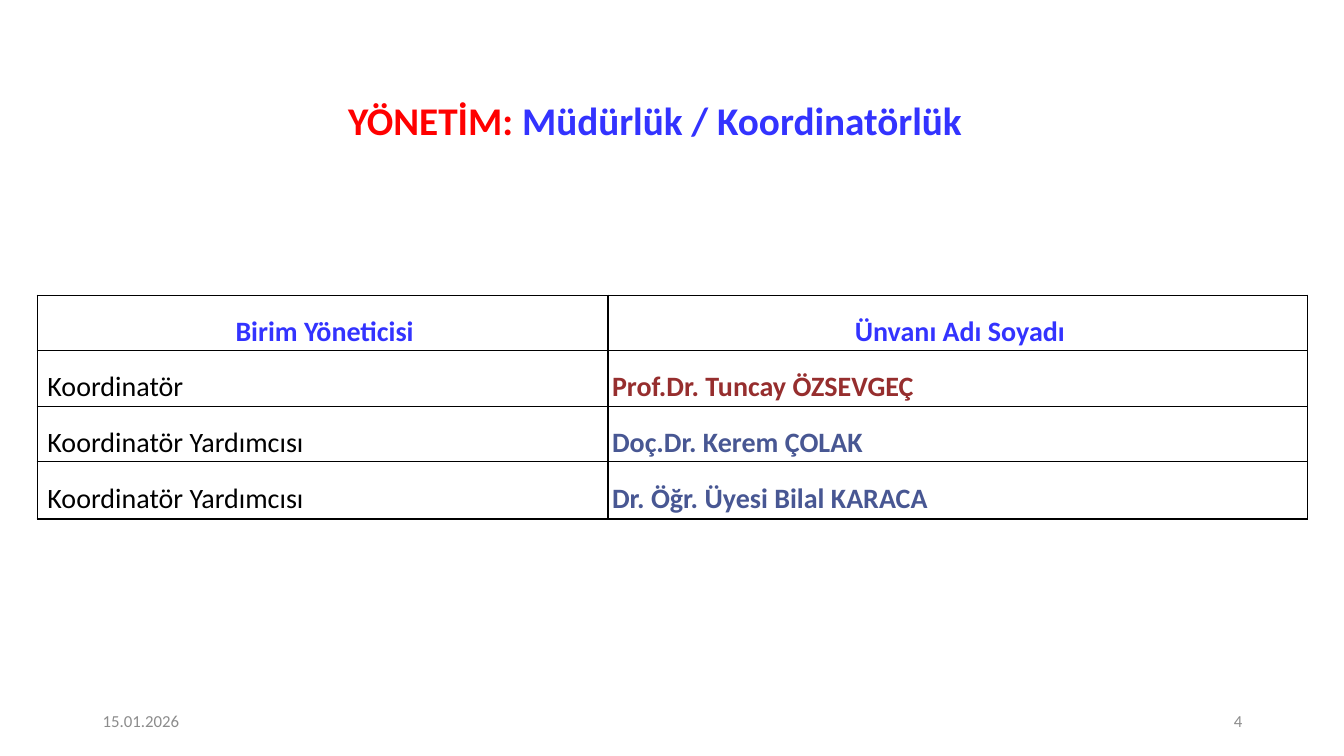
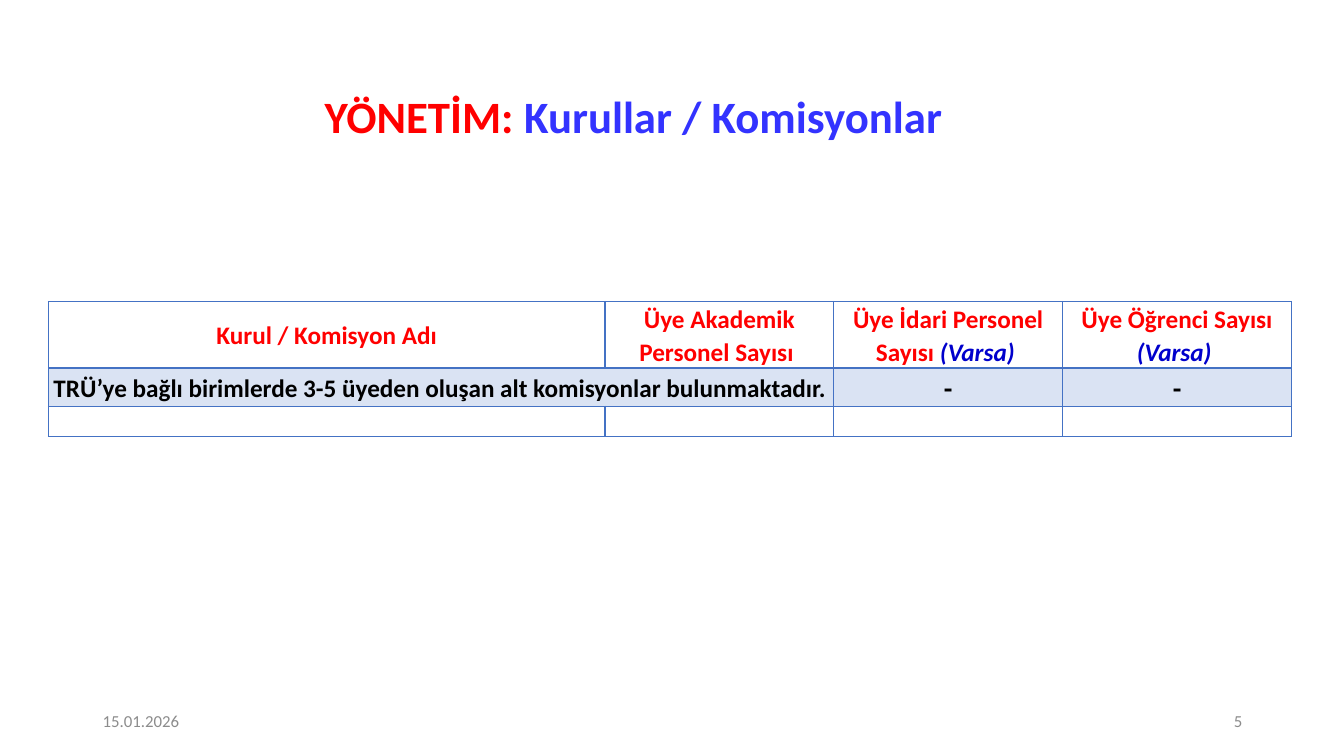
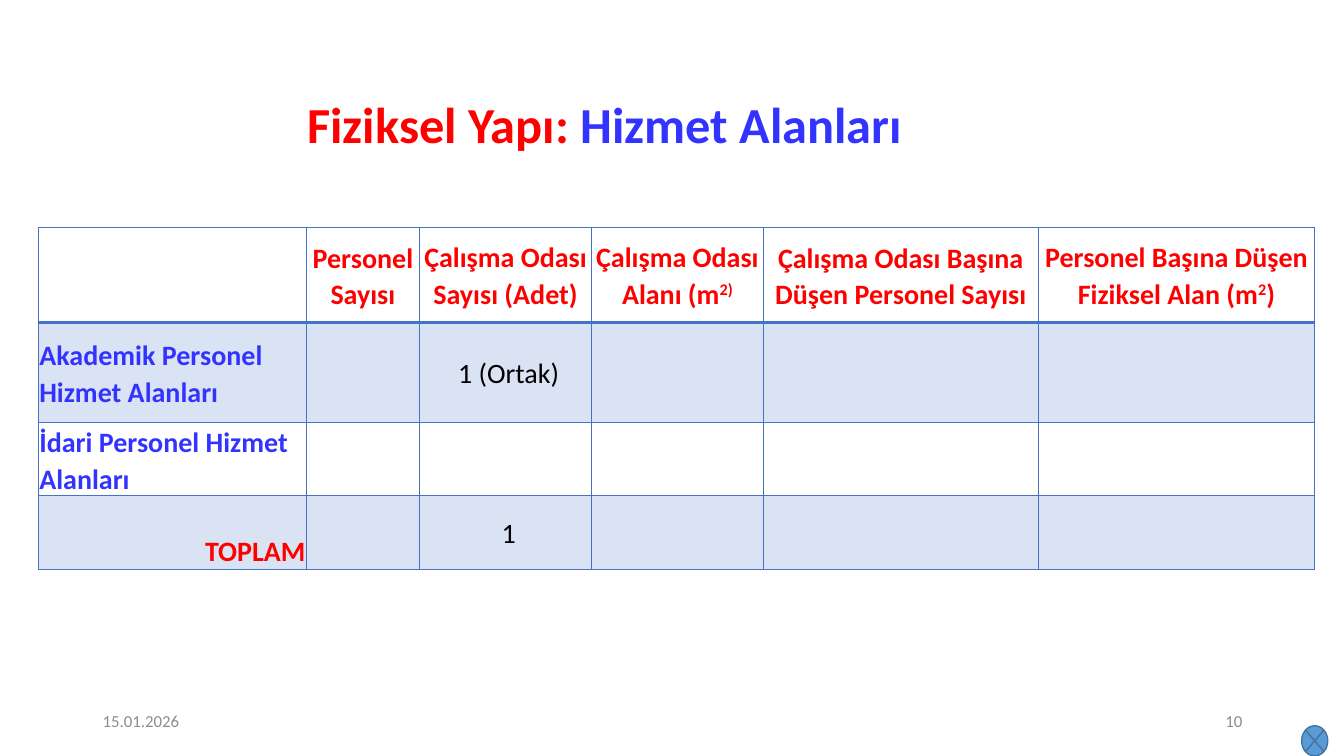
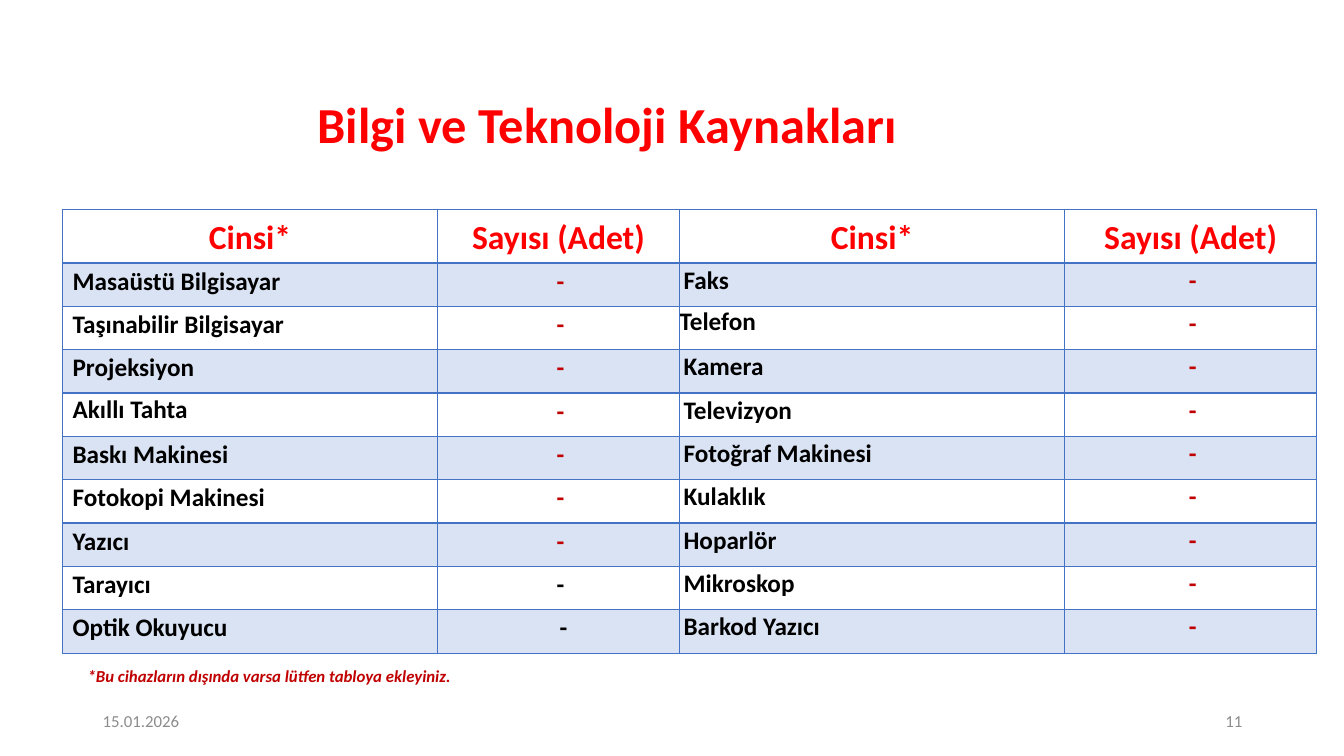
from dataclasses import dataclass, replace

from lxml.etree import SubElement
from pptx import Presentation
from pptx.dml.color import RGBColor
from pptx.enum.shapes import MSO_SHAPE
from pptx.enum.text import MSO_ANCHOR, MSO_AUTO_SIZE, PP_ALIGN
from pptx.oxml import parse_xml
from pptx.oxml.ns import nsdecls, qn
from pptx.util import Inches, Pt

# Shared look
FONT = "Calibri"
BLACK = RGBColor(0x00, 0x00, 0x00)
RED = RGBColor(0xFF, 0x00, 0x00)
DARK_RED = RGBColor(0xC0, 0x00, 0x00)
BRICK = RGBColor(0x96, 0x2E, 0x2E)
BLUE = RGBColor(0x33, 0x33, 0xFF)
NAVY = RGBColor(0x00, 0x00, 0xCC)
SLATE = RGBColor(0x48, 0x57, 0x93)
GRID_BLUE = RGBColor(0x44, 0x72, 0xC4)
BAND = RGBColor(0xDA, 0xE3, 0xF3)
GRAY = RGBColor(0x8C, 0x8C, 0x8C)
MARKER_FILL = RGBColor(0x5B, 0x9B, 0xD5)
MARKER_LINE = RGBColor(0x43, 0x73, 0x9E)

DATE = "15.01.2026"
TITLE_ONLY = 5
LEFT, CENTER, RIGHT = PP_ALIGN.LEFT, PP_ALIGN.CENTER, PP_ALIGN.RIGHT
TOP, MIDDLE, BOTTOM = MSO_ANCHOR.TOP, MSO_ANCHOR.MIDDLE, MSO_ANCHOR.BOTTOM


@dataclass(frozen=True)
class CellStyle:
    size: int = 18
    color: RGBColor = RED
    bold: bool = True
    align: PP_ALIGN = CENTER
    anchor: MSO_ANCHOR = MIDDLE
    side: float = 0.01      # left and right margin, inches
    top: float = 0.01       # top margin, inches
    indent: float = 0       # left paragraph indent, inches
    line: float = 1.07
    after: int = 0


# Text
def add_run(p, text, size, color, bold=False, italic=False, superscript=False):
    r = p.add_run()
    r.text = text
    font = r.font
    font.name, font.size, font.bold, font.italic = FONT, Pt(size), bold, italic
    font.color.rgb = color
    if superscript:
        r._r.get_or_add_rPr().set("baseline", "30000")


def add_title(slide, box, size, heading, topic=""):
    title = slide.shapes.title
    title.left, title.top, title.width, title.height = map(Inches, box)
    tf = title.text_frame
    tf.vertical_anchor, tf.auto_size = MIDDLE, MSO_AUTO_SIZE.NONE
    p = tf.paragraphs[0]
    p.alignment, p.line_spacing = CENTER, 0.9
    add_run(p, heading, size, RED, bold=True)
    if topic:
        add_run(p, topic, size, BLUE, bold=True)


def add_text(slide, box, text, color, align=LEFT, anchor=MIDDLE, **emphasis):
    tf = slide.shapes.add_textbox(*map(Inches, box)).text_frame
    tf.word_wrap, tf.vertical_anchor = True, anchor
    p = tf.paragraphs[0]
    p.alignment = align
    add_run(p, text, 12, color, **emphasis)


def new_slide(prs, number, title_box, size, heading, topic=""):
    slide = prs.slides.add_slide(prs.slide_layouts[TITLE_ONLY])
    add_title(slide, title_box, size, heading, topic)
    add_text(slide, (0.92, 6.95, 3, 0.4), DATE, GRAY)
    add_text(slide, (9.42, 6.95, 3, 0.4), str(number), GRAY, RIGHT)
    return slide


# Tables
def set_borders(cell, color, widths):
    """Widths in points for the left, right, top and bottom edges."""
    tcPr = cell._tc.get_or_add_tcPr()
    for i, (edge, width) in enumerate(zip("LRTB", widths)):
        ln = parse_xml(f'<a:ln{edge} {nsdecls("a")} w="{Pt(width)}"/>')
        fill = SubElement(ln, qn("a:solidFill"))
        SubElement(fill, qn("a:srgbClr")).set("val", str(color))
        tcPr.insert(i, ln)


def fill_cell(cell, content):
    """Content is None or a style with runs: plain text or (text, options)."""
    style, *runs = content or (CellStyle(size=12),)
    cell.margin_left = cell.margin_right = Inches(style.side)
    cell.margin_top, cell.margin_bottom = Inches(style.top), 0
    cell.vertical_anchor = style.anchor
    p = cell.text_frame.paragraphs[0]
    p.alignment, p.line_spacing = style.align, style.line
    p.space_after = Pt(style.after)
    p._p.get_or_add_pPr().set("marL", str(Inches(style.indent)))
    for run in runs:
        text, options = (run, {}) if isinstance(run, str) else run
        add_run(p, text, **{"size": style.size, "color": style.color,
                            "bold": style.bold, **options})
    if not runs:
        p._p.get_or_add_endParaRPr().set("sz", str(style.size * 100))


def add_grid(slide, left, top, cols, heights, rows, color=GRID_BLUE,
             header_line=2, banded=True):
    frame = slide.shapes.add_table(len(rows), len(cols), Inches(left), Inches(top),
                                   Inches(sum(cols)), Inches(sum(heights)))
    table = frame.table
    table.first_row = table.horz_banding = False
    for column, width in zip(table.columns, cols):
        column.width = Inches(width)
    for i, (row, height) in enumerate(zip(rows, heights)):
        table.rows[i].height = Inches(height)
        for j, content in enumerate(row):
            cell = table.cell(i, j)
            if banded and i % 2:
                cell.fill.solid()
                cell.fill.fore_color.rgb = BAND
            else:
                cell.fill.background()
            fill_cell(cell, content)
            set_borders(cell, color, (1, 1, header_line if i == 1 else 1,
                                      header_line if i == 0 else 1))
    return table


# Slides
def management_slide(prs):
    slide = new_slide(prs, 4, (1.14, 0.84, 10.71, 0.76), 28,
                      "YÖNETİM: ", "Müdürlük / Koordinatörlük")
    head = CellStyle(20, BLUE, side=0, top=0, indent=0.04, line=1.5)
    role = replace(head, color=BLACK, bold=False, align=LEFT, indent=0.1)
    name = replace(head, color=SLATE, align=LEFT)
    people = [("Koordinatör", "Prof.Dr. Tuncay ÖZSEVGEÇ", BRICK),
              ("Koordinatör Yardımcısı", "Doç.Dr. Kerem ÇOLAK", SLATE),
              ("Koordinatör Yardımcısı", "Dr. Öğr. Üyesi Bilal KARACA", SLATE)]
    rows = [[(head, "Birim Yöneticisi"), (head, "Ünvanı Adı Soyadı")]]
    rows += [[(role, post), (replace(name, color=color), person)]
             for post, person, color in people]
    add_grid(slide, 0.37, 2.93, [5.66, 6.94], [0.55, 0.55, 0.55, 0.57], rows,
             color=BLACK, header_line=1, banded=False)


def boards_slide(prs):
    slide = new_slide(prs, 5, (0.7, 0.78, 11.17, 0.8), 32,
                      "YÖNETİM: ", "Kurullar / Komisyonlar")
    head = CellStyle()
    wide = replace(head, side=0.05)
    note = replace(wide, color=BLACK, align=LEFT)
    dash = (replace(head, size=20, color=BLACK), "-")
    if_any = ("(Varsa) ", {"color": NAVY, "italic": True})
    rows = [[(wide, "Kurul / Komisyon Adı"),
             (head, "Üye Akademik Personel Sayısı "),
             (head, "Üye İdari Personel Sayısı ", if_any),
             (head, "Üye Öğrenci Sayısı ", if_any)],
            [(note, "TRÜ’ye bağlı birimlerde 3-5 üyeden oluşan alt "
                    "komisyonlar bulunmaktadır."), None, dash, dash],
            [None] * 4]
    table = add_grid(slide, 0.48, 2.99, [5.52] + [2.27] * 3,
                     [0.66, 0.38, 0.3], rows)
    table.cell(1, 0).merge(table.cell(1, 1))


def service_areas_slide(prs):
    slide = new_slide(prs, 10, (0.38, 0.93, 11.24, 0.67), 36,
                      "Fiziksel Yapı: ", "Hizmet Alanları")
    # Corner marker
    sp = slide.shapes.add_shape(MSO_SHAPE.FLOWCHART_SUMMING_JUNCTION,
                                *map(Inches, (12.91, 7.2, 0.26, 0.3)))
    sp.shadow.inherit = False
    sp.fill.solid()
    sp.fill.fore_color.rgb = MARKER_FILL
    sp.line.color.rgb, sp.line.width = MARKER_LINE, Pt(1)

    head = CellStyle(20)
    tight = replace(head, side=0, top=0)
    label = replace(head, color=BLUE, align=LEFT)
    total = replace(head, align=RIGHT, anchor=BOTTOM)
    value = replace(tight, color=BLACK, bold=False)
    rows = [[None,
             (head, "Personel Sayısı"),
             (tight, "Çalışma Odası Sayısı (Adet)"),
             (tight, "Çalışma Odası Alanı (m", ("2)", {"superscript": True})),
             (head, "Çalışma Odası Başına Düşen Personel Sayısı"),
             (tight, "Personel Başına Düşen Fiziksel Alan (m",
              ("2", {"superscript": True}), ")")],
            [(label, "Akademik Personel Hizmet Alanları"), None,
             (replace(value, indent=0.06), "1 (Ortak)"), None, None, None],
            [(label, "İdari Personel Hizmet Alanları")] + [None] * 5,
            [(total, "TOPLAM"), None, (replace(value, indent=0.06), "1"),
             None, None, None]]
    add_grid(slide, 0.38, 2.26, [2.66, 1.12, 1.71, 1.7, 2.73, 2.74],
             [0.94, 0.99, 0.73, 0.73], rows)


def technology_slide(prs):
    slide = new_slide(prs, 11, (0.29, 0.85, 11.47, 0.83), 36,
                      "Bilgi ve Teknoloji Kaynakları")
    head = CellStyle(24, side=0.06, after=8)
    right_head = replace(head, side=0, top=0)
    item = replace(head, size=18, color=BLACK, align=LEFT, anchor=TOP, indent=0.04)
    right_item = replace(item, side=0, top=0)
    count = replace(item, color=DARK_RED, align=CENTER)
    right_count = replace(count, side=0, top=0)
    # Devices that depart from the usual paragraph spacing
    special = {"Akıllı Tahta": {"line": 1, "after": 0},
               "Telefon": {"line": 1, "after": 0, "indent": 0}}
    black_counts = {"Tarayıcı": {"color": BLACK},
                    "Optik Okuyucu": {"color": BLACK, "indent": 0.1}}
    devices = [("Masaüstü Bilgisayar", "Faks"),
               ("Taşınabilir Bilgisayar", "Telefon"),
               ("Projeksiyon", "Kamera"),
               ("Akıllı Tahta", "Televizyon"),
               ("Baskı Makinesi", "Fotoğraf Makinesi"),
               ("Fotokopi Makinesi", "Kulaklık"),
               ("Yazıcı", "Hoparlör"),
               ("Tarayıcı", "Mikroskop"),
               ("Optik Okuyucu", "Barkod Yazıcı")]
    rows = [[(style, text) for style in (head, right_head)
             for text in ("Cinsi*", "Sayısı (Adet)")]]
    rows += [[(replace(item, **special.get(first, {})), first),
              (replace(count, **black_counts.get(first, {})), "-"),
              (replace(right_item, **special.get(second, {})), second),
              (right_count, "-")] for first, second in devices]
    add_grid(slide, 0.62, 2.08, [3.72, 2.4, 3.82, 2.5],
             [0.53] + [0.43] * len(devices), rows)
    add_text(slide, (0.77, 6.56, 5, 0.3),
             "*Bu cihazların dışında varsa lütfen tabloya ekleyiniz.",
             DARK_RED, anchor=TOP, bold=True, italic=True)


def main():
    prs = Presentation()
    prs.slide_width, prs.slide_height = Inches(13.33), Inches(7.5)
    management_slide(prs)
    boards_slide(prs)
    service_areas_slide(prs)
    technology_slide(prs)
    prs.save("out.pptx")


if __name__ == "__main__":
    main()
